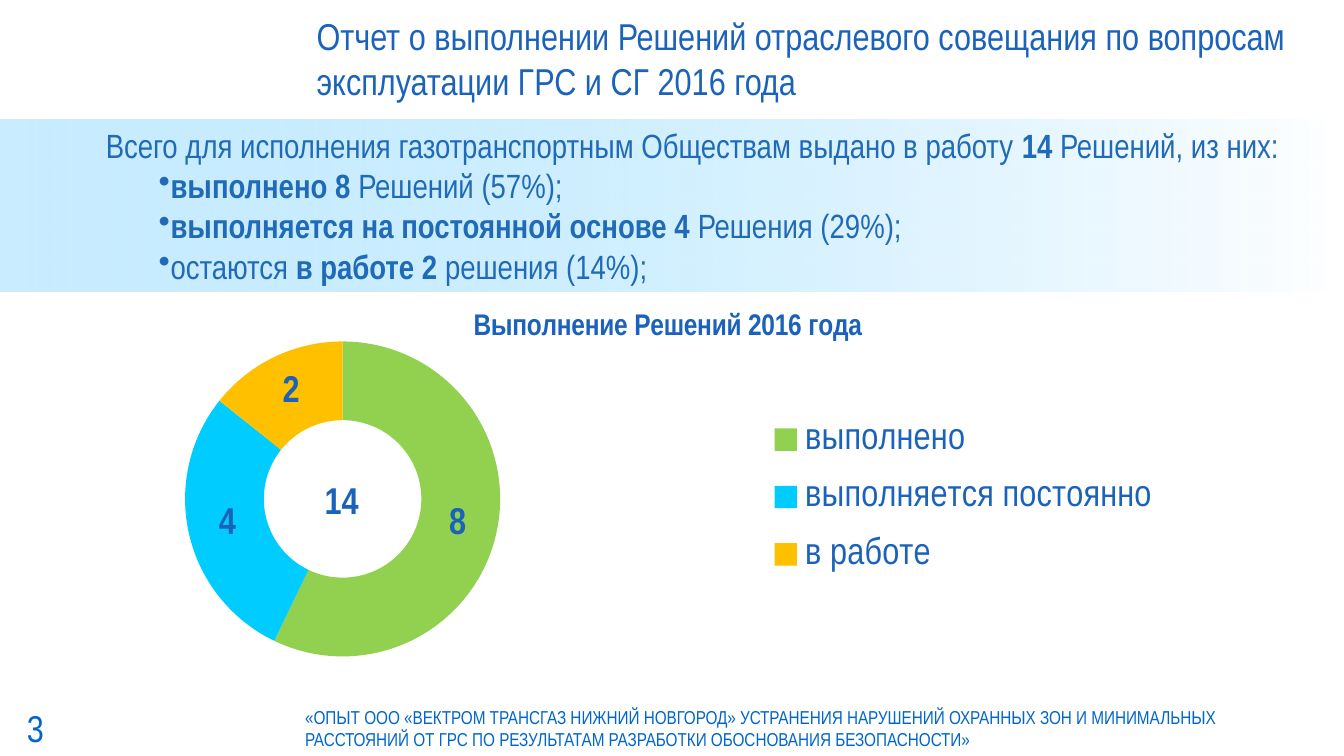
from dataclasses import dataclass

from lxml.etree import SubElement
from pptx import Presentation
from pptx.chart.data import CategoryChartData
from pptx.dml.color import RGBColor
from pptx.enum.chart import XL_CHART_TYPE, XL_LEGEND_POSITION
from pptx.enum.shapes import MSO_SHAPE
from pptx.enum.text import MSO_ANCHOR, PP_ALIGN
from pptx.oxml import parse_xml
from pptx.oxml.ns import nsdecls, qn
from pptx.util import Pt


@dataclass(frozen=True)
class Theme:
    font: str = "Arial Narrow"
    heading: str = "1A62BA"
    body: str = "206AB7"
    footer: str = "0066CC"
    band_start: str = "66CCFF"
    band_end: str = "FFFFFF"
    slices: tuple = ("92D050", "00CCFF", "FFC000")
    large: int = 20
    medium: int = 18
    chart_title: int = 16
    small: int = 10


THEME = Theme()


def set_font(font, size, color, bold=False):
    font.name = THEME.font
    font.size = Pt(size)
    font.bold = bold
    font.color.rgb = RGBColor.from_string(color)


def set_frame(frame, margins=(7.2, 3.6), anchor=MSO_ANCHOR.MIDDLE):
    frame.word_wrap = True
    frame.vertical_anchor = anchor
    frame.margin_left = frame.margin_right = Pt(margins[0])
    frame.margin_top = frame.margin_bottom = Pt(margins[1])


def add_label(slide, box, text, size, color, bold=False, align=PP_ALIGN.LEFT, **frame_options):
    frame = slide.shapes.add_textbox(*map(Pt, box)).text_frame
    set_frame(frame, **frame_options)
    paragraph = frame.paragraphs[0]
    paragraph.text = text
    paragraph.alignment = align
    set_font(paragraph.font, size, color, bold)


def set_indent(paragraph, left, first_line, bullet=None):
    properties = paragraph._p.get_or_add_pPr()
    properties.set("marL", str(Pt(left)))
    properties.set("indent", str(Pt(first_line)))
    if bullet:
        SubElement(properties, qn("a:buChar")).set("char", bullet)


def add_summary_band(slide, box, lines):
    """Lines are lists of (text, bold) runs; all but the first are bulleted."""
    band = slide.shapes.add_shape(MSO_SHAPE.RECTANGLE, *map(Pt, box))
    band.shadow.inherit = False
    band.line.fill.background()
    band.fill.gradient()
    band.fill.gradient_angle = 0
    for stop, color in zip(band.fill.gradient_stops, (THEME.band_start, THEME.band_end)):
        stop.color.rgb = RGBColor.from_string(color)
    stop_colors = band._element.spPr.find(qn("a:gradFill")).iter(qn("a:srgbClr"))
    for stop_color, opacity in zip(stop_colors, (35, 82)):
        SubElement(stop_color, qn("a:alpha")).set("val", str(opacity * 1000))

    frame = band.text_frame
    set_frame(frame, margins=(0, 0))
    for index, runs in enumerate(lines):
        paragraph = frame.add_paragraph() if index else frame.paragraphs[0]
        set_indent(paragraph, 56.7 if index else 28.35, 28.35, "•" if index else None)
        paragraph.alignment = PP_ALIGN.LEFT
        set_font(paragraph.font, THEME.medium, THEME.body)
        for text, bold in runs:
            run = paragraph.add_run()
            run.text = text
            run.font.bold = bold


def set_layout(element, x, y, width, height, inner=False):
    """Place a chart part by fractions of the chart area."""
    target = '<c:layoutTarget val="inner"/>' if inner else ""
    sizes = "".join(f'<c:{name} val="{value}"/>'
                    for name, value in zip("xywh", (x, y, width, height)))
    layout = parse_xml(
        f'<c:layout {nsdecls("c")}><c:manualLayout>{target}<c:xMode val="edge"/>'
        f'<c:yMode val="edge"/>{sizes}</c:manualLayout></c:layout>')
    for previous in element.findall(qn("c:layout")):
        element.remove(previous)
    element.insert(1 if element.tag == qn("c:legend") else 0, layout)


def add_decisions_chart(slide, box, title, counts):
    data = CategoryChartData()
    data.categories = counts.keys()
    data.add_series(title, counts.values())
    chart = slide.shapes.add_chart(XL_CHART_TYPE.DOUGHNUT, *map(Pt, box), data).chart
    set_font(chart.font, THEME.medium, THEME.heading)

    chart.has_title = True
    paragraph = chart.chart_title.text_frame.paragraphs[0]
    paragraph.text = title
    set_font(paragraph.font, THEME.chart_title, THEME.heading, bold=True)

    chart.has_legend = True
    chart.legend.position = XL_LEGEND_POSITION.RIGHT
    chart.legend.include_in_layout = False
    set_font(chart.legend.font, THEME.large, THEME.heading)
    set_layout(chart.legend._element, 0.57, 0.28, 0.36, 0.49)

    plot = chart.plots[0]
    plot.vary_by_categories = True
    plot._element.find(qn("c:holeSize")).set("val", "50")
    set_layout(chart._chartSpace.chart.plotArea, 0.09, 0.13, 0.27, 0.8, inner=True)
    for index, color in enumerate(THEME.slices):
        point_format = plot.series[0].points[index].format
        point_format.fill.solid()
        point_format.fill.fore_color.rgb = RGBColor.from_string(color)
        point_format.line.fill.background()
    labels = plot.series[0].data_labels
    labels.show_value = True
    labels.show_percentage = False
    set_font(labels.font, THEME.large, THEME.heading, bold=True)

    left, top, _, _ = box
    add_label(slide, (left + 119, top + 88, 46, 48), str(sum(counts.values())),
              THEME.large, THEME.heading, bold=True, align=PP_ALIGN.CENTER)


def add_footer(slide, box, number, text):
    left, top, width, height = box
    add_label(slide, (left, top + 1.5, 136, 28), number, THEME.large, THEME.footer,
              margins=(0, 0))
    add_label(slide, (left + 142, top, width - 142, height), text, THEME.small, THEME.footer,
              anchor=MSO_ANCHOR.TOP)


def main():
    presentation = Presentation()
    presentation.slide_width, presentation.slide_height = Pt(720), Pt(405)
    slide = presentation.slides.add_slide(presentation.slide_layouts[6])

    add_summary_band(slide, (0, 64, 720, 92), [
        [("Всего для исполнения газотранспортным Обществам выдано в работу ", False),
         ("14", True), (" Решений, из них:", False)],
        [("выполнено 8 ", True), ("Решений (57%);", False)],
        [("выполняется на постоянной основе 4 ", True), ("Решения (29%);", False)],
        [("остаются ", False), ("в работе 2 ", True), ("решения (14%);", False)],
    ])
    add_label(slide, (162.5, 3.6, 550, 55.4),
              "Отчет о выполнении Решений отраслевого совещания по вопросам "
              "эксплуатации ГРС и СГ 2016 года", THEME.large, THEME.heading)
    add_decisions_chart(slide, (41, 155.5, 633.6, 211), "Выполнение Решений 2016 года",
                        {"выполнено": 8, "выполняется постоянно": 4, "в работе": 2})
    add_footer(slide, (14.4, 374.4, 698, 31.5), "3",
               "«ОПЫТ ООО «ВЕКТРОМ ТРАНСГАЗ НИЖНИЙ НОВГОРОД» УСТРАНЕНИЯ НАРУШЕНИЙ "
               "ОХРАННЫХ ЗОН И МИНИМАЛЬНЫХ РАССТОЯНИЙ ОТ ГРС ПО РЕЗУЛЬТАТАМ "
               "РАЗРАБОТКИ ОБОСНОВАНИЯ БЕЗОПАСНОСТИ»")
    presentation.save("out.pptx")


if __name__ == "__main__":
    main()
